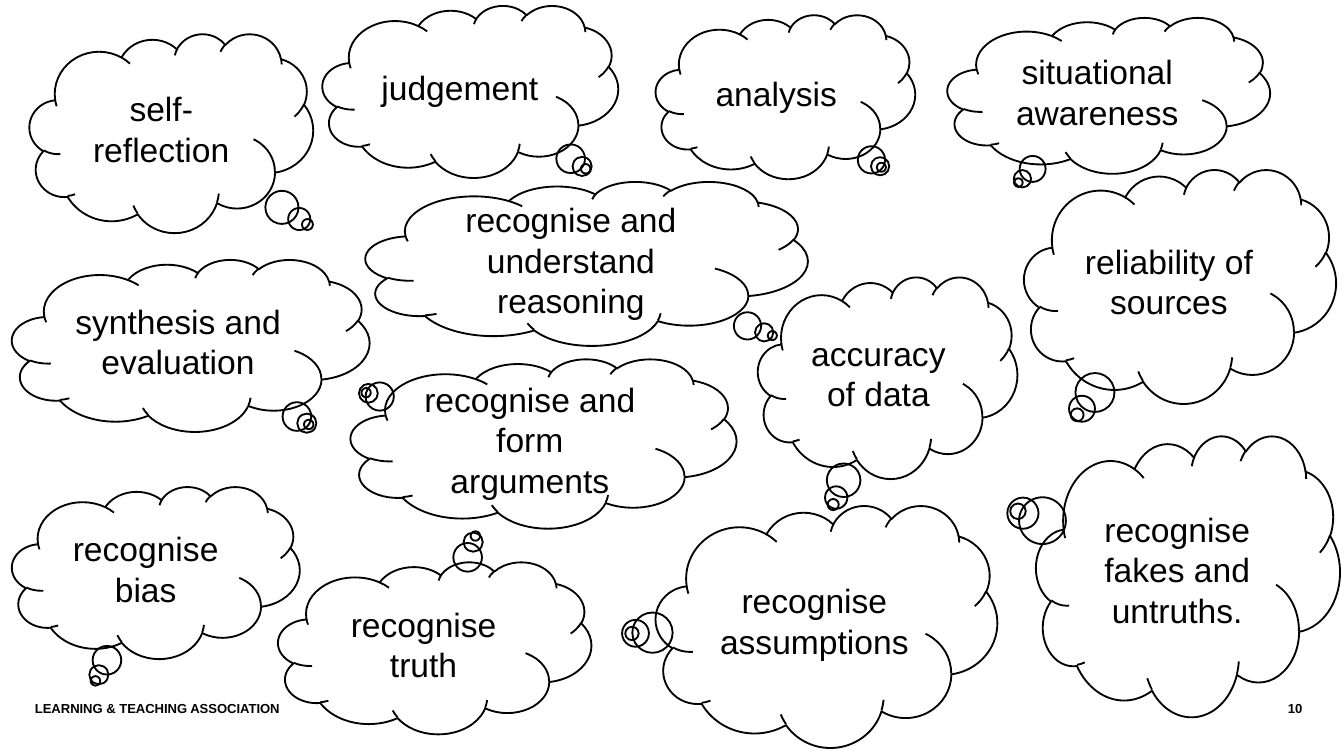
import pptx
import pptx.util
import pptx.dml.color
import pptx.enum.shapes
import pptx.enum.text

Inches = pptx.util.Inches
Pt = pptx.util.Pt
ALIGN = pptx.enum.text.PP_ALIGN
ANCHOR = pptx.enum.text.MSO_ANCHOR
COLORS = {"ink": "000000", "paper": "FFFFFF"}
WIDTH = 10
TAIL = (-0.21, 0.63)

CLOUDS = [
    ("situational awareness", (7.05, 0.13, 2.4, 1.16), (-0.28, 0.56)),
    ("analysis", (4.88, 0.11, 1.93, 1.22), (0.37, 0.43)),
    ("recognise fakes and untruths.", (7.71, 3.24, 2.26, 2.09), (-0.56, -0.23)),
    ("judgement", (2.4, 0.04, 2.2, 1.28), (0.39, 0.45)),
    ("recognise assumptions", (4.88, 3.76, 2.54, 1.8), (-0.57, 0.03)),
    ("recognise truth", (2.07, 4.18, 2.33, 1.28), (0.13, -0.65)),
    ("self- reflection", (0.22, 0.25, 2.11, 1.48), (0.48, 0.46)),
    ("recognise and understand reasoning", (2.72, 1.35, 3.29, 1.22), (0.42, 0.44)),
    ("recognise bias", (0.09, 3.62, 2.14, 1.28), TAIL),
    ("reliability of sources", (7.62, 1.26, 2.32, 1.74), (-0.33, 0.55)),
    ("accuracy of data", (5.64, 2.06, 1.93, 1.5), TAIL),
    ("recognise and form arguments", (2.61, 2.67, 2.87, 1.26), (-0.46, -0.3)),
    ("synthesis and evaluation", (0.09, 1.93, 2.66, 1.28), (0.33, 0.46)),
]


def tint(name):
    return pptx.dml.color.RGBColor.from_string(COLORS[name])


def write(frame, text, font="Arial", size=18, bold=False, color="ink",
          align=ALIGN.LEFT, anchor=ANCHOR.TOP):
    frame.word_wrap = True
    frame.vertical_anchor = anchor
    para = frame.paragraphs[0]
    para.alignment = align
    run = para.add_run()
    run.text = text
    run.font.name = font
    run.font.size = Pt(size)
    run.font.bold = bold
    run.font.color.rgb = tint(color)


class Board:
    def __init__(self, slide, font="Arial"):
        self.slide = slide
        self.font = font
        fill = slide.background.fill
        fill.solid()
        fill.fore_color.rgb = tint("paper")

    def cloud(self, text, box, tail):
        kind = pptx.enum.shapes.MSO_SHAPE.CLOUD_CALLOUT
        shape = self.slide.shapes.add_shape(kind, *map(Inches, box))
        shape.shadow.inherit = False
        shape.fill.background()
        shape.line.color.rgb = tint("ink")
        shape.line.width = Pt(1)
        for i, value in enumerate(tail):
            shape.adjustments[i] = value
        write(shape.text_frame, text, font=self.font,
              align=ALIGN.CENTER, anchor=ANCHOR.MIDDLE)

    def label(self, text, box, align=ALIGN.LEFT):
        frame = self.slide.shapes.add_textbox(*map(Inches, box)).text_frame
        frame.margin_left = frame.margin_right = 0
        frame.margin_top = frame.margin_bottom = 0
        write(frame, text, font=self.font, size=7, bold=True, align=align)


def main():
    deck = pptx.Presentation()
    deck.slide_width = Inches(WIDTH)
    deck.slide_height = Inches(WIDTH * 9 / 16)
    board = Board(deck.slides.add_slide(deck.slide_layouts[6]))
    for text, box, tail in CLOUDS:
        board.cloud(text, box, tail)
    board.label("LEARNING & TEACHING ASSOCIATION", (0.26, 5.21, 8.41, 0.3))
    board.label("10", (8.7, 5.21, 0.99, 0.3), align=ALIGN.RIGHT)
    deck.save("out.pptx")


if __name__ == "__main__":
    main()
